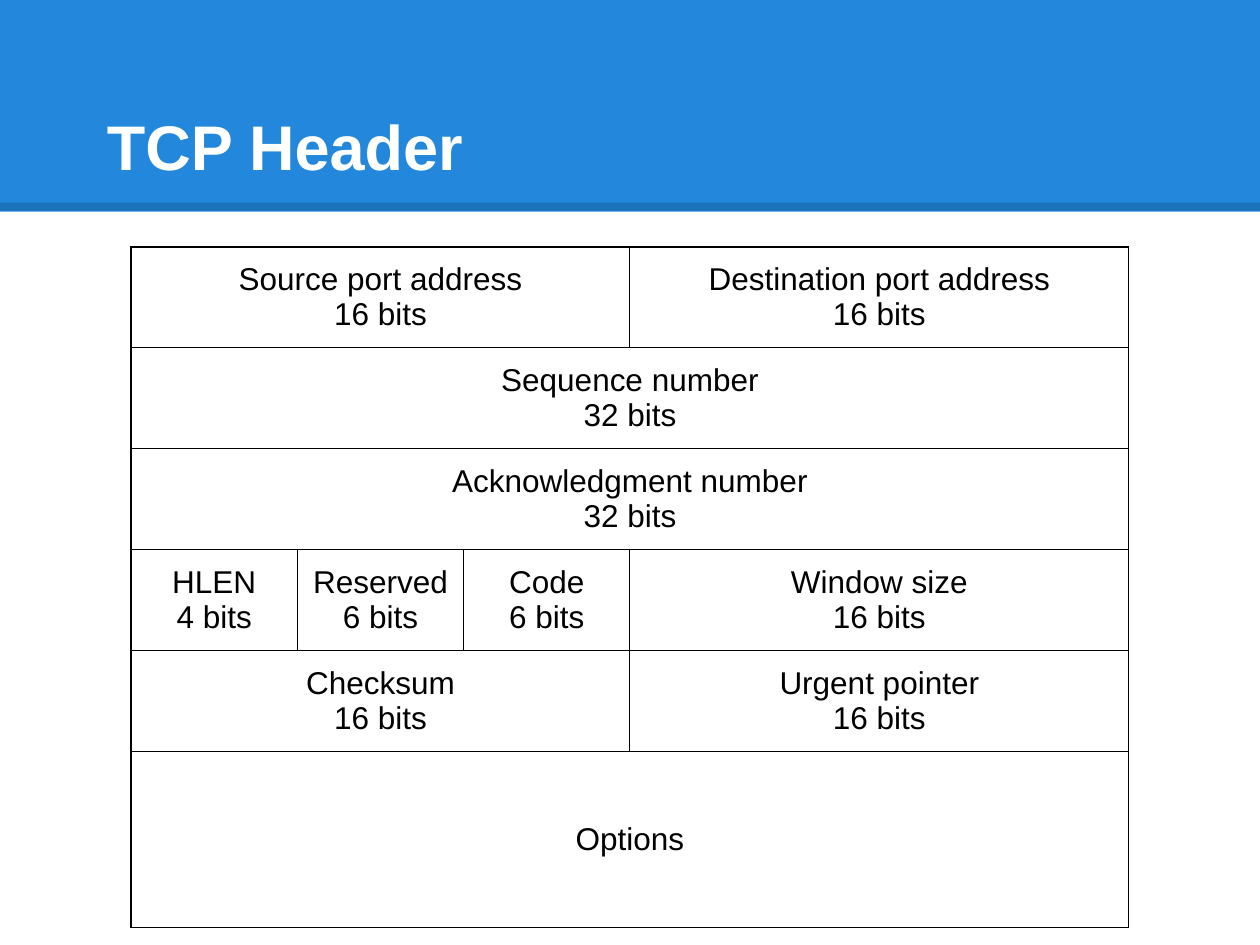
from lxml.etree import SubElement
from pptx import Presentation
from pptx.dml.color import RGBColor
from pptx.enum.shapes import MSO_CONNECTOR, MSO_SHAPE
from pptx.enum.text import MSO_ANCHOR, PP_ALIGN
from pptx.oxml import parse_xml
from pptx.oxml.ns import nsdecls, qn
from pptx.util import Inches, Pt

BLUE = RGBColor(0x23, 0x88, 0xDB)
BLACK = RGBColor(0, 0, 0)
WHITE = RGBColor(255, 255, 255)
FONT = "Arial"
MARGIN = Inches(0.1)

TITLE = "TCP Header"
# Each row lists its fields as (text, columns spanned, rows spanned).
HEADER_ROWS = [
    [("Source port address\n16 bits", 3, 1), ("Destination port address\n16 bits", 3, 1)],
    [("Sequence number\n32 bits", 6, 1)],
    [("Acknowledgment number\n32 bits", 6, 1)],
    [("HLEN\n4 bits", 1, 1), ("Reserved\n6 bits", 1, 1), ("Code\n6 bits", 1, 1),
     ("Window size\n16 bits", 3, 1)],
    [("Checksum\n16 bits", 3, 1), ("Urgent pointer\n16 bits", 3, 1)],
    [("Options", 6, 2)],
]
COLUMN_WIDTHS = [1.32] * 6
ROW_HEIGHTS = [0.8] * 5 + [0.7] * 2


def set_margins(target):
    target.margin_left = target.margin_right = MARGIN
    target.margin_top = target.margin_bottom = MARGIN


def style_font(font, size, color, bold=False):
    font.name, font.size, font.bold = FONT, Pt(size), bold
    font.color.rgb = color


def add_banner(slide, width):
    banner = slide.shapes.add_shape(MSO_SHAPE.RECTANGLE, 0, 0, width, Inches(1.68))
    banner.shadow.inherit = False
    banner.fill.solid()
    banner.fill.fore_color.rgb = BLUE
    banner.line.fill.background()

    edge_y = Inches(1.64)
    edge = slide.shapes.add_connector(MSO_CONNECTOR.STRAIGHT, 0, edge_y, width, edge_y)
    edge.line.width = Pt(4.5)
    edge.line.color.rgb = BLACK
    properties = edge._element.spPr
    SubElement(properties.find(".//" + qn("a:srgbClr")), qn("a:alpha"), val="15000")
    SubElement(properties, qn("a:effectLst"))


def add_title(slide):
    box = slide.shapes.add_textbox(Inches(0.5), Inches(0.3), Inches(9), Inches(1.25))
    frame = box.text_frame
    frame.word_wrap = True
    frame.vertical_anchor = MSO_ANCHOR.BOTTOM
    set_margins(frame)
    frame.text = TITLE
    paragraph = frame.paragraphs[0]
    properties = paragraph._p.get_or_add_pPr()
    properties.set("marL", "0")
    properties.set("indent", str(Inches(0.25)))
    style_font(paragraph.runs[0].font, 36, WHITE, bold=True)


def style_cell(cell):
    """Give a cell a clear fill and thin black borders."""
    properties = cell._tc.get_or_add_tcPr()
    for side in ("lnL", "lnR", "lnT", "lnB"):
        properties.append(parse_xml(
            f'<a:{side} {nsdecls("a")} w="{Pt(0.75)}"><a:solidFill>'
            f'<a:srgbClr val="{BLACK}"/></a:solidFill></a:{side}>'))
    cell.fill.background()
    set_margins(cell)
    cell.vertical_anchor = MSO_ANCHOR.MIDDLE


def add_header_table(slide):
    table = slide.shapes.add_table(
        len(ROW_HEIGHTS), len(COLUMN_WIDTHS), Inches(1.04), Inches(1.96),
        Inches(sum(COLUMN_WIDTHS)), Inches(sum(ROW_HEIGHTS))).table
    table.first_row = table.horz_banding = False
    for column, width in zip(table.columns, COLUMN_WIDTHS):
        column.width = Inches(width)
    for row, height in zip(table.rows, ROW_HEIGHTS):
        row.height = Inches(height)
    for cell in table.iter_cells():
        style_cell(cell)

    for row_index, fields in enumerate(HEADER_ROWS):
        column_index = 0
        for text, columns, rows in fields:
            cell = table.cell(row_index, column_index)
            if columns > 1 or rows > 1:
                cell.merge(table.cell(row_index + rows - 1, column_index + columns - 1))
            cell.text_frame.text = text
            for paragraph in cell.text_frame.paragraphs:
                paragraph.alignment = PP_ALIGN.CENTER
                style_font(paragraph.runs[0].font, 18, BLACK)
            column_index += columns


def main():
    presentation = Presentation()
    presentation.slide_width = Inches(10)
    presentation.slide_height = Inches(7.5)
    slide = presentation.slides.add_slide(presentation.slide_layouts[6])
    add_banner(slide, presentation.slide_width)
    add_title(slide)
    add_header_table(slide)
    presentation.save("out.pptx")


if __name__ == "__main__":
    main()
